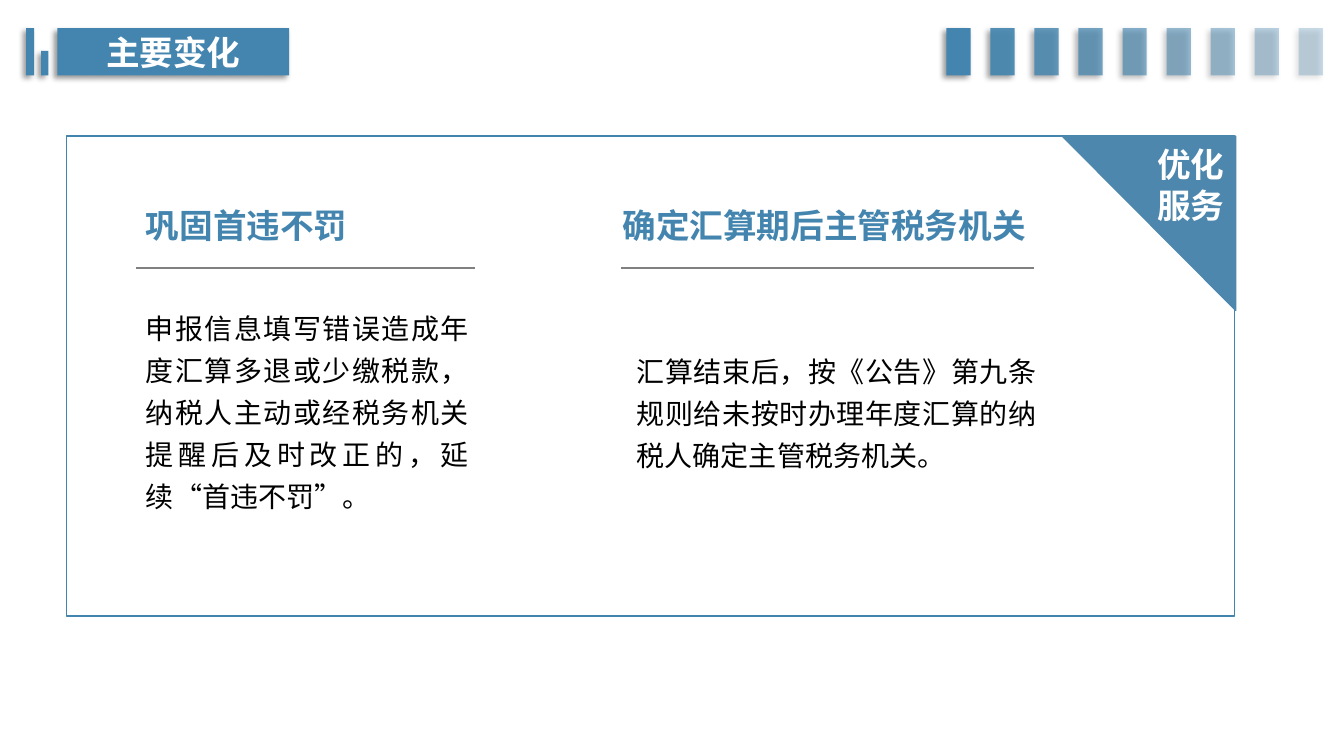
from dataclasses import dataclass

from lxml import etree
from pptx import Presentation
from pptx import util as u
from pptx.dml.color import RGBColor
from pptx.enum import lang, shapes, text
from pptx.oxml import ns

FONT = "Noto Sans CJK SC"
BLUE = RGBColor(0x44, 0x85, 0xAF)
CORNER_BLUE = RGBColor(0x4D, 0x87, 0xAD)
GREY = RGBColor(0x80, 0x80, 0x80)
WHITE = RGBColor(0xFF, 0xFF, 0xFF)
BLACK = RGBColor(0, 0, 0)

BAND_TOP, BAND_HEIGHT = 0.71, 1.19
STRIPE_COUNT, STRIPE_LEFT, STRIPE_STEP, STRIPE_WIDTH = 9, 23.85, 1.11, 0.61
HEADING_TOP, HEADING_HEIGHT, RULE_TOP = 5.05, 1.27, 6.76


@dataclass
class Box:
    """A rectangle in centimetres."""
    left: float
    top: float
    width: float
    height: float

    def lengths(self) -> list[u.Length]:
        return [u.Cm(n) for n in (self.left, self.top, self.width, self.height)]


@dataclass
class Measure:
    """A heading, the rule below it and the explanation."""
    heading: str
    heading_left: float
    heading_width: float
    rule_left: float
    rule_right: float
    body: str
    body_box: Box


MEASURES = [
    Measure("巩固首违不罚", 3.43, 8.53, 3.43, 11.96,
            "申报信息填写错误造成年度汇算多退或少缴税款，纳税人主动或经税务机关"
            "提醒后及时改正的，延续“首违不罚”。",
            Box(3.43, 7.52, 8.64, 5.46)),
    Measure("确定汇算期后主管税务机关", 15.44, 10.85, 15.65, 26.06,
            "汇算结束后，按《公告》第九条规则给未按时办理年度汇算的纳税人确定主管税务机关。",
            Box(15.8, 8.59, 10.57, 3.33)),
]


def write(frame, *lines: str, size: float = 24, color: RGBColor = BLACK,
          bold: bool = False, align=text.PP_ALIGN.LEFT,
          spacing: float = 1.0) -> None:
    frame.word_wrap = True
    for index, line in enumerate(lines):
        paragraph = frame.paragraphs[0] if index == 0 else frame.add_paragraph()
        paragraph.alignment = align
        paragraph.line_spacing = spacing
        run = paragraph.add_run()
        run.text = line
        font = run.font
        font.name, font.size, font.bold = FONT, u.Pt(size), bold
        font.color.rgb = color
        font.language_id = lang.MSO_LANGUAGE_ID.SIMPLIFIED_CHINESE
        east_asian = etree.SubElement(run._r.rPr, ns.qn("a:ea"))
        east_asian.set("typeface", FONT)


def add_block(parent, box: Box, fill: RGBColor | None = None,
              line: RGBColor | None = None,
              kind=shapes.MSO_SHAPE.RECTANGLE):
    block = parent.add_shape(kind, *box.lengths())
    block.shadow.inherit = False
    if fill is None:
        block.fill.background()
    else:
        block.fill.solid()
        block.fill.fore_color.rgb = fill
    if line is None:
        block.line.fill.background()
    else:
        block.line.color.rgb = line
        block.line.width = u.Pt(1)
    return block


def add_shadowed_bar(parent, box: Box, opacity: int = 100):
    bar = add_block(parent, box, BLUE)
    properties = bar._element.spPr
    if opacity < 100:
        color = properties.find(".//" + ns.qn("a:srgbClr"))
        etree.SubElement(color, ns.qn("a:alpha")).set("val", str(opacity * 1000))
    # Soft shadow towards the lower left
    effects = properties.find(ns.qn("a:effectLst"))
    shadow = etree.SubElement(
        effects, ns.qn("a:outerShdw"), blurRad=str(u.Pt(4)), dist=str(u.Pt(3)),
        dir=str(135 * 60000), algn="tr", rotWithShape="0")
    black = etree.SubElement(shadow, ns.qn("a:srgbClr"), val=str(BLACK))
    etree.SubElement(black, ns.qn("a:alpha"), val="40000")
    return bar


def add_label(parent, box: Box, *lines: str, **style) -> None:
    write(parent.add_textbox(*box.lengths()).text_frame, *lines, **style)


def add_rule(parent, left: float, right: float, top: float) -> None:
    rule = parent.add_connector(shapes.MSO_CONNECTOR.STRAIGHT, u.Cm(left),
                                u.Cm(top), u.Cm(right), u.Cm(top))
    rule.line.color.rgb = GREY
    rule.line.width = u.Pt(1.5)
    etree.SubElement(rule._element.spPr, ns.qn("a:effectLst"))


def add_measure(parent, measure: Measure) -> None:
    group = parent.add_group_shape().shapes
    add_label(group, measure.body_box, measure.body, size=20,
              align=text.PP_ALIGN.JUSTIFY, spacing=1.25)
    add_rule(group, measure.rule_left, measure.rule_right, RULE_TOP)
    heading_box = Box(measure.heading_left, HEADING_TOP,
                      measure.heading_width, HEADING_HEIGHT)
    add_label(group, heading_box, measure.heading, color=BLUE, bold=True)


def main() -> None:
    deck = Presentation()
    deck.slide_width, deck.slide_height = u.Cm(33.87), u.Cm(19.05)
    canvas = deck.slides.add_slide(deck.slide_layouts[6]).shapes

    # Title band
    title = add_shadowed_bar(canvas, Box(1.45, BAND_TOP, 5.84, BAND_HEIGHT))
    title.text_frame.vertical_anchor = text.MSO_ANCHOR.MIDDLE
    write(title.text_frame, "主要变化", color=WHITE, bold=True,
          align=text.PP_ALIGN.CENTER)
    add_shadowed_bar(canvas, Box(0.66, BAND_TOP, 0.2, BAND_HEIGHT))
    add_shadowed_bar(canvas, Box(1.04, 1.28, 0.18, 0.62))

    # Fading stripes
    for index in range(STRIPE_COUNT):
        stripe = Box(STRIPE_LEFT + index * STRIPE_STEP, BAND_TOP,
                     STRIPE_WIDTH, BAND_HEIGHT)
        add_shadowed_bar(canvas, stripe, opacity=100 - 9 * index)

    # Frame, measures and corner flag
    add_block(canvas, Box(1.68, 3.43, 29.44, 12.09), line=BLUE)
    for measure in MEASURES:
        add_measure(canvas, measure)
    corner = add_block(canvas, Box(26.77, 3.43, 4.37, 4.39), CORNER_BLUE,
                       CORNER_BLUE, shapes.MSO_SHAPE.RIGHT_TRIANGLE)
    corner.rotation = 180
    add_label(canvas, Box(28.91, 3.51, 3.81, 2.31), "优化", "服务",
              color=WHITE, bold=True)

    deck.save("out.pptx")


if __name__ == "__main__":
    main()
